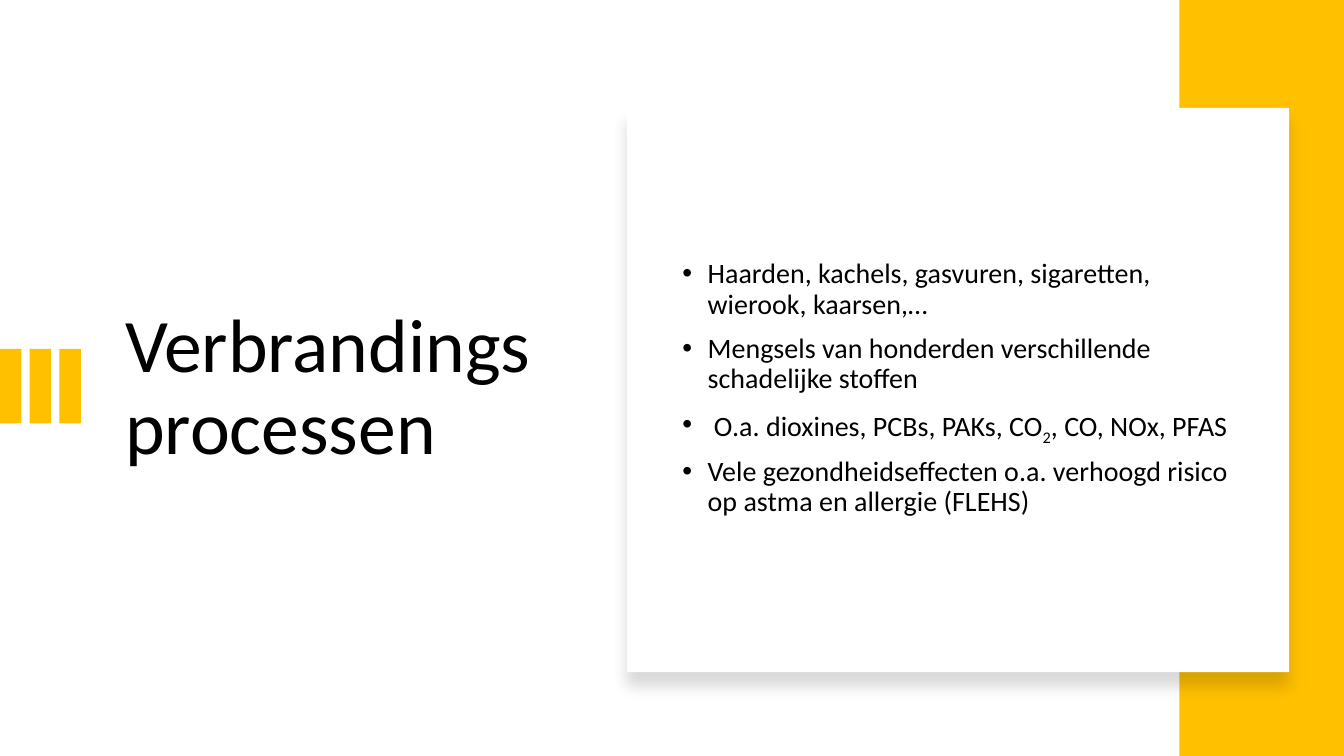
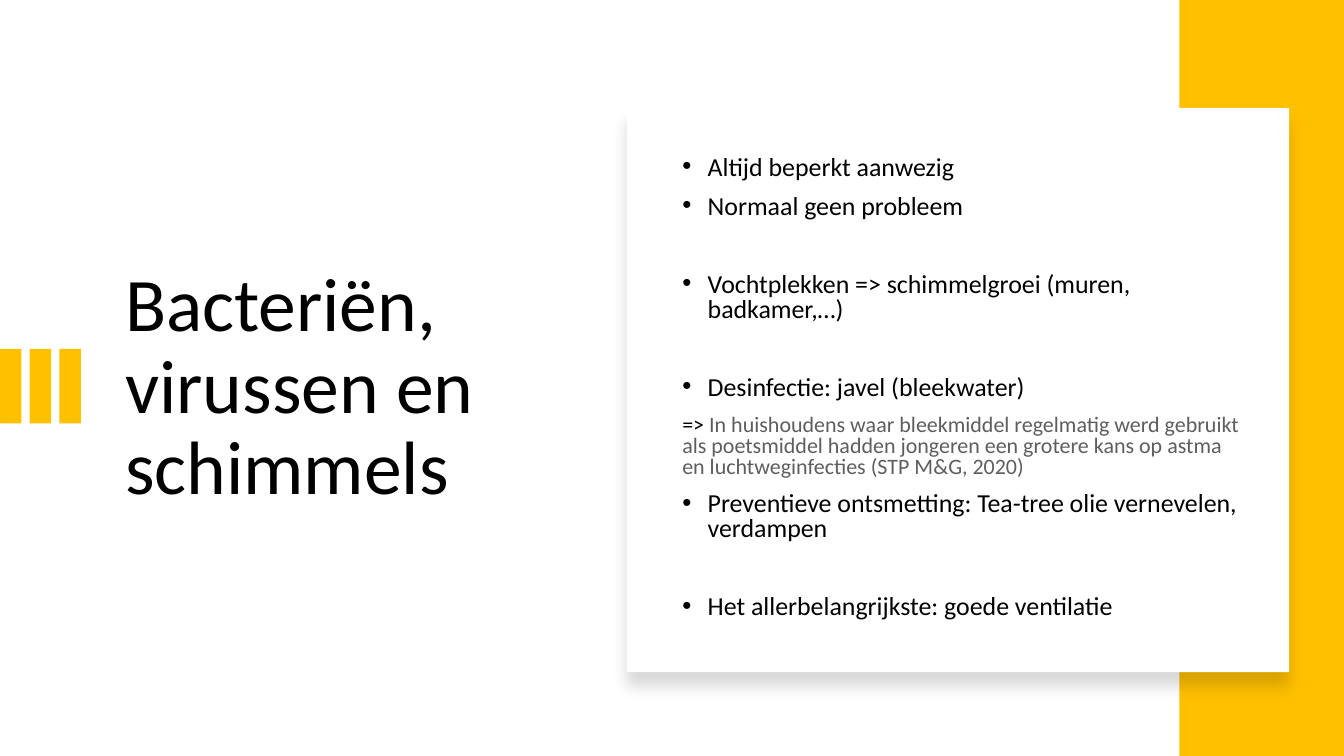
from dataclasses import dataclass

from lxml import etree
from pptx import Presentation
from pptx.dml.color import RGBColor
from pptx.enum import shapes, text
from pptx.oxml import ns
from pptx.util import Cm, Pt

YELLOW = RGBColor(0xFF, 0xC0, 0x00)
WHITE = RGBColor(0xFF, 0xFF, 0xFF)
BLACK = RGBColor(0x00, 0x00, 0x00)
GREY = RGBColor(0x5E, 0x5E, 0x5E)
FONT = "Calibri"

SLIDE_W, SLIDE_H = Cm(33.87), Cm(19.05)
TITLE_BOX = Cm(2.9), Cm(3.71), Cm(10.82), Cm(12.17)
STRIPES_BOX = Cm(0), Cm(8.79), Cm(2.04), Cm(1.88)
BAND_BOX = Cm(29.72), Cm(0), SLIDE_W - Cm(29.72), SLIDE_H
CARD_BOX = Cm(15.8), Cm(2.72), Cm(16.69), Cm(14.22)
STRIPE_COUNT = 3
STRIPE_W = Cm(0.54)


@dataclass
class Item:
    runs: list
    size: float
    bullet: bool = True
    space_before: float = 10


def add_rect(parent, box, color):
    sp = parent.add_shape(shapes.MSO_SHAPE.RECTANGLE, *box)
    sp.fill.solid()
    sp.fill.fore_color.rgb = color
    sp.line.fill.background()
    sp.shadow.inherit = False
    return sp


def add_soft_shadow(sp):
    effects = sp.element.spPr.find(ns.qn("a:effectLst"))
    shadow = etree.SubElement(
        effects, ns.qn("a:outerShdw"), blurRad=str(Pt(11)), dist=str(Pt(10)),
        dir="5400000", algn="t", rotWithShape="0")
    color = etree.SubElement(shadow, ns.qn("a:srgbClr"), val=str(BLACK))
    etree.SubElement(color, ns.qn("a:alpha"), val="15000")


def place(sp, box):
    sp.left, sp.top, sp.width, sp.height = box
    tf = sp.text_frame
    tf.word_wrap = True
    tf.auto_size = text.MSO_AUTO_SIZE.NONE
    tf.vertical_anchor = text.MSO_ANCHOR.MIDDLE
    return tf


def style_paragraph(p, size, line_spacing, space_before):
    p.alignment = text.PP_ALIGN.LEFT
    p.line_spacing = line_spacing
    p.space_before = Pt(space_before)
    p.font.name = FONT
    p.font.size = Pt(size)
    p.font.color.rgb = BLACK


def set_bullet(p, bullet):
    pPr = p._p.get_or_add_pPr()
    indent = Cm(0.64) if bullet else 0
    pPr.set("marL", str(indent))
    pPr.set("indent", str(-indent))
    if bullet:
        mark = etree.Element(ns.qn("a:buChar"), char="•")
    else:
        mark = etree.Element(ns.qn("a:buNone"))
    pPr.find(ns.qn("a:defRPr")).addprevious(mark)


def add_title(s, box, title):
    tf = place(s.shapes.title, box)
    tf.text = title
    style_paragraph(tf.paragraphs[0], 54, 0.9, 0)


def add_stripes(s, box):
    left, top, width, height = box
    pitch = (width - STRIPE_W) // (STRIPE_COUNT - 1)
    group = s.shapes.add_group_shape()
    for i in range(STRIPE_COUNT):
        add_rect(group.shapes, (left + i * pitch, top, STRIPE_W, height), YELLOW)


def add_card(s, box, items, line_spacing):
    left, top, width, height = box
    card = add_rect(s.shapes, box, WHITE)
    add_soft_shadow(card)
    body = s.placeholders[1]
    card.element.addnext(body.element)
    tf = place(body, (left + Cm(1.14), top + Cm(0.99),
                      width - Cm(2.09), height - Cm(2.05)))
    for i, item in enumerate(items):
        p = tf.add_paragraph() if i else tf.paragraphs[0]
        style_paragraph(p, item.size, line_spacing, item.space_before)
        set_bullet(p, item.bullet)
        for words, look in item.runs:
            r = p.add_run()
            r.text = words
            if look == "sub":
                r._r.get_or_add_rPr().set("baseline", "-25000")
            elif look == "grey":
                r.font.color.rgb = GREY


def add_topic_slide(prs, title, items, line_spacing):
    s = prs.slides.add_slide(prs.slide_layouts[1])
    add_title(s, TITLE_BOX, title)
    add_stripes(s, STRIPES_BOX)
    add_rect(s.shapes, BAND_BOX, YELLOW)
    add_card(s, CARD_BOX, items, line_spacing)


def combustion_point(*runs):
    return Item(list(runs), 20)


def microbe_point(words, space_before=10):
    return Item([(words, "")], 18.5, space_before=space_before)


COMBUSTION = [
    combustion_point(("Haarden, kachels, gasvuren, sigaretten, wierook, kaarsen,…", "")),
    combustion_point(("Mengsels van honderden verschillende schadelijke stoffen", "")),
    combustion_point((" O.a. dioxines, PCBs, PAKs, CO", ""), ("2", "sub"),
                     (", CO, NOx, PFAS", "")),
    combustion_point(("Vele gezondheidseffecten o.a. verhoogd risico op astma "
                      "en allergie (FLEHS)", "")),
]

SECTION_GAP = 38
MICROBES = [
    microbe_point("Altijd beperkt aanwezig"),
    microbe_point("Normaal geen probleem"),
    microbe_point("Vochtplekken => schimmelgroei (muren, badkamer,…)", SECTION_GAP),
    microbe_point("Desinfectie: javel (bleekwater)", SECTION_GAP),
    Item([("=> ", ""),
          ("In huishoudens waar bleekmiddel regelmatig werd gebruikt als "
           "poetsmiddel hadden jongeren een grotere kans op astma en "
           "luchtweginfecties (STP M&G, 2020)", "grey")], 15.7, bullet=False),
    microbe_point("Preventieve ontsmetting: Tea-tree olie vernevelen, verdampen"),
    microbe_point("Het allerbelangrijkste: goede ventilatie", SECTION_GAP),
]


def main():
    prs = Presentation()
    prs.slide_width, prs.slide_height = SLIDE_W, SLIDE_H
    add_topic_slide(prs, "Verbrandingsprocessen", COMBUSTION, 0.9)
    add_topic_slide(prs, "Bacteriën, virussen en schimmels", MICROBES, 0.8)
    prs.save("out.pptx")


if __name__ == "__main__":
    main()
